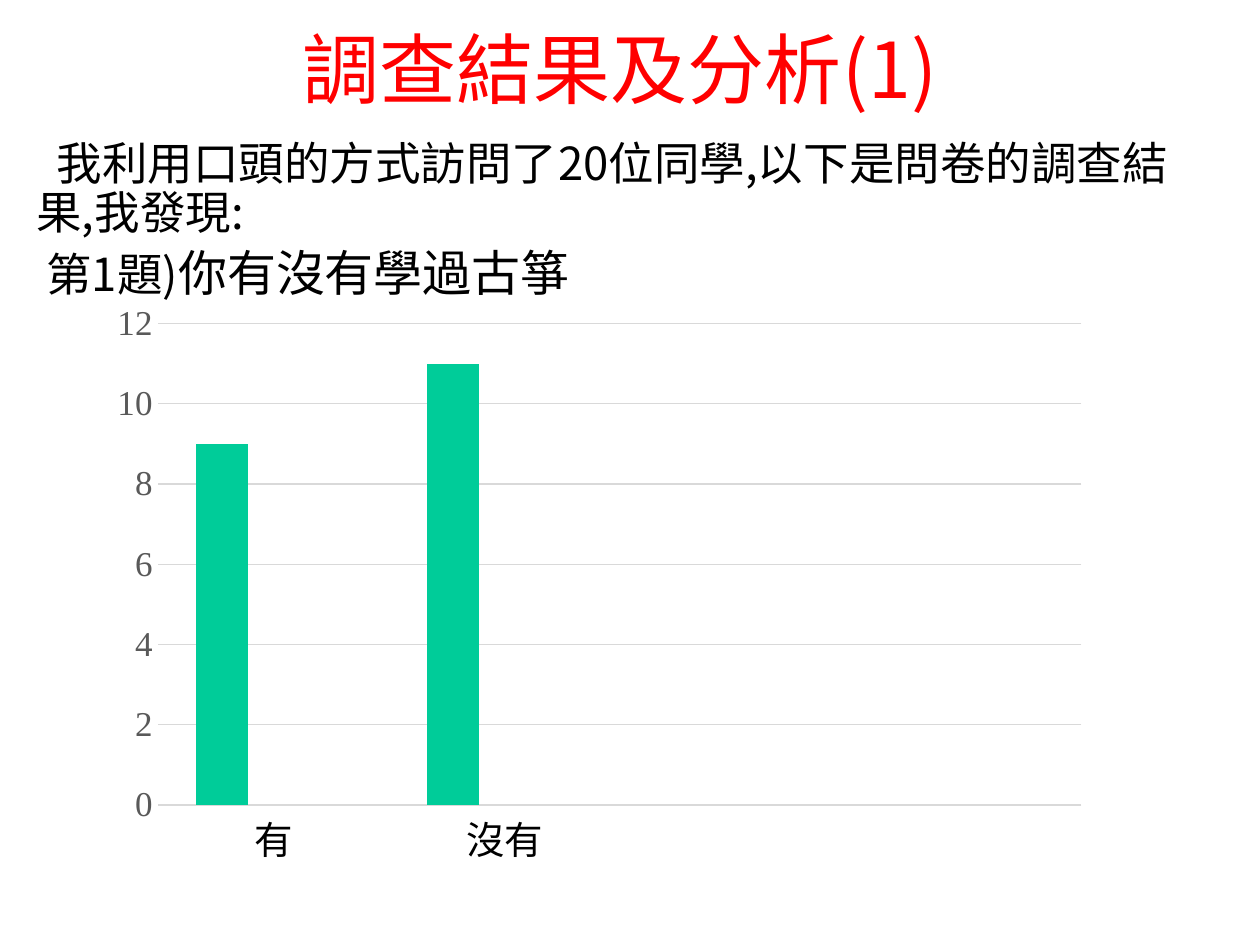
from lxml import etree
from pptx import Presentation
from pptx.chart import data
from pptx.dml.color import RGBColor
from pptx.enum import chart as ch, text
from pptx.oxml import ns
from pptx.util import Cm, Pt

RED = RGBColor(0xFF, 0x00, 0x00)
BLACK = RGBColor(0x00, 0x00, 0x00)
GREY = RGBColor(0x59, 0x59, 0x59)
GRID = RGBColor(0xD9, 0xD9, 0xD9)
SERIES_COLORS = (RGBColor(0x00, 0xCC, 0x99), RGBColor(0x33, 0x33, 0xCC),
                 RGBColor(0xFF, 0xFF, 0xFF))
CJK = "Noto Sans CJK SC"
SERIF = "Times New Roman"


def format_font(font, size, color, name):
    font.size = Pt(size)
    font.color.rgb = color
    font.name = name


def add_text(p, words, size=26, color=BLACK, name=CJK):
    """Add one run, with the typeface set for East Asian letters too."""
    r = p.add_run()
    r.text = words
    format_font(r.font, size, color, name)
    ea = etree.SubElement(r.font._element, ns.qn("a:ea"))
    ea.set("typeface", name)


def place(sp, box, anchor):
    """Move a placeholder to its box and return its text frame."""
    sp.left, sp.top, sp.width, sp.height = box
    tf = sp.text_frame
    tf.auto_size = text.MSO_AUTO_SIZE.NONE
    tf.word_wrap = True
    tf.vertical_anchor = anchor
    return tf


def fill_title(sp, box):
    p = place(sp, box, text.MSO_ANCHOR.MIDDLE).paragraphs[0]
    p.alignment = text.PP_ALIGN.CENTER
    add_text(p, "調查結果及分析(1)", size=44, color=RED)


def fill_intro(sp, box):
    tf = place(sp, box, text.MSO_ANCHOR.TOP)
    tf.margin_top = Cm(0.1)
    paragraphs = (
        (0.41, 0, [("我利用口頭的方式訪問了20位同學,以下是問卷的調查結果,我發現:", 26)]),
        (0.2, 5.5, [("第1題)", 26), ("你有沒有學過古箏", 28)]),
    )
    for i, (indent, before, runs) in enumerate(paragraphs):
        p = tf.add_paragraph() if i else tf.paragraphs[0]
        p.alignment = text.PP_ALIGN.LEFT
        p.line_spacing = 0.9
        p.space_before = Pt(before)
        p._p.get_or_add_pPr().set("indent", str(Cm(indent)))
        for words, size in runs:
            add_text(p, words, size=size)


def set_plot_layout(chart, x, y, w, h):
    """Fix the inner plot area, in percent of the chart."""
    area = chart._chartSpace.chart.plotArea
    for old in area.findall(ns.qn("c:layout")):
        area.remove(old)
    layout = etree.Element(ns.qn("c:layout"))
    manual = etree.SubElement(layout, ns.qn("c:manualLayout"))
    settings = (("layoutTarget", "inner"), ("xMode", "edge"), ("yMode", "edge"),
                ("x", x / 100), ("y", y / 100), ("w", w / 100), ("h", h / 100))
    for tag, value in settings:
        etree.SubElement(manual, ns.qn("c:" + tag)).set("val", str(value))
    area.insert(0, layout)


def add_answer_chart(slide, box):
    answers = data.CategoryChartData()
    answers.categories = ["有", "沒有", "", ""]
    answers.add_series("Series 1", (9, 11, None, None))
    for name in ("Series 2", "Series 3"):
        answers.add_series(name, (None,) * 4)
    chart = slide.shapes.add_chart(
        ch.XL_CHART_TYPE.COLUMN_CLUSTERED, *box, answers).chart
    chart.has_legend = False
    chart.has_title = False
    format_font(chart.font, 10, BLACK, SERIF)
    set_plot_layout(chart, 4.5, 2.9, 95, 84.1)

    plot = chart.plots[0]
    plot.gap_width = 150
    plot.overlap = 0
    plot.vary_by_categories = False
    for series, color in zip(plot.series, SERIES_COLORS):
        series.format.fill.solid()
        series.format.fill.fore_color.rgb = color

    for axis, size, color, name in ((chart.category_axis, 22, BLACK, CJK),
                                    (chart.value_axis, 20, GREY, SERIF)):
        axis.major_tick_mark = ch.XL_TICK_MARK.NONE
        axis.minor_tick_mark = ch.XL_TICK_MARK.NONE
        axis.format.line.fill.background()
        format_font(axis.tick_labels.font, size, color, name)
    axis = chart.value_axis
    axis.minimum_scale, axis.maximum_scale, axis.major_unit = 0, 12, 2
    axis.has_major_gridlines = True
    line = axis.major_gridlines.format.line
    line.color.rgb = GRID
    line.width = Pt(0.75)


def main():
    prs = Presentation()
    prs.slide_width, prs.slide_height = Cm(25.4), Cm(19.05)
    slide = prs.slides.add_slide(prs.slide_layouts[0])
    title, intro = slide.placeholders
    fill_title(title, (Cm(1.7), Cm(0), Cm(21.6), Cm(2.74)))
    fill_intro(intro, (Cm(0.48), Cm(2.74), Cm(24), Cm(15.4)))
    add_answer_chart(slide, (Cm(2.3), Cm(6.13), Cm(19.6), Cm(11.6)))
    prs.save("out.pptx")


if __name__ == "__main__":
    main()
